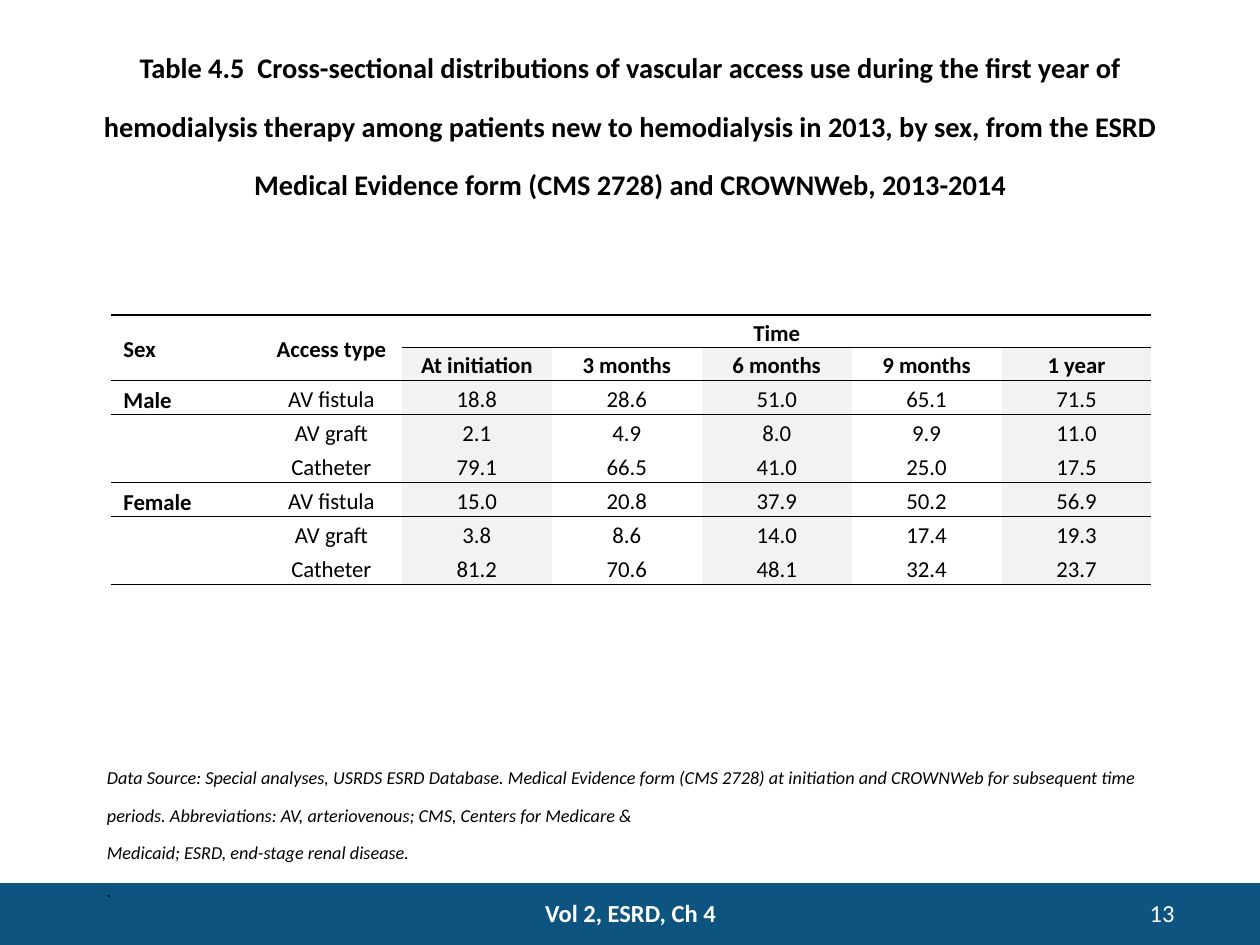
from lxml import etree
from pptx import Presentation
from pptx import util as u
from pptx.dml.color import RGBColor
from pptx.enum import shapes, text
from pptx.oxml import ns

LEFT, CENTER, RIGHT = text.PP_ALIGN.LEFT, text.PP_ALIGN.CENTER, text.PP_ALIGN.RIGHT


def style(p, size, color="000000", align=LEFT, bold=False, italic=False, raised=False):
    p.alignment = align
    for r in p.runs:
        f = r.font
        f.name, f.size, f.bold, f.italic = "Calibri", u.Pt(size), bold, italic
        f.color.rgb = RGBColor.from_string(color)
        if raised:
            f._element.set("baseline", "30000")


def rule(cell, side, width):
    ln = etree.SubElement(cell._tc.get_or_add_tcPr(), ns.qn(f"a:{side}"), w=str(u.Pt(width)))
    fill = etree.SubElement(ln, ns.qn("a:solidFill"))
    etree.SubElement(fill, ns.qn("a:srgbClr"), val="000000")


prs = Presentation()
prs.slide_width, prs.slide_height = u.Inches(10), u.Inches(7.5)
s = prs.slides.add_slide(prs.slide_layouts[6])

# Footer band
sp = s.shapes.add_shape(shapes.MSO_SHAPE.RECTANGLE, 0, u.Inches(7.01), prs.slide_width, u.Inches(0.5))
sp.shadow.inherit = False
sp.fill.solid()
sp.fill.fore_color.rgb = RGBColor.from_string("0E5480")
sp.line.fill.background()

# Sex by access type table
rows = [
    ["Sex", "Access type", "Time", "", "", "", ""],
    ["", "", "At initiation", "3 months", "6 months", "9 months", "1 year"],
    ["Male", "AV fistula", "18.8", "28.6", "51.0", "65.1", "71.5"],
    ["", "AV graft", "2.1", "4.9", "8.0", "9.9", "11.0"],
    ["", "Catheter", "79.1", "66.5", "41.0", "25.0", "17.5"],
    ["Female", "AV fistula", "15.0", "20.8", "37.9", "50.2", "56.9"],
    ["", "AV graft", "3.8", "8.6", "14.0", "17.4", "19.3"],
    ["", "Catheter", "81.2", "70.6", "48.1", "32.4", "23.7"],
]
HEADER_ROWS, FIRST_TIME_COL = 2, 2
rules = {0: 1, 1: 0.5, 2: 1, 5: 1, 8: 1}  # row boundary: line width
table = s.shapes.add_table(len(rows), len(rows[0]), u.Inches(0.88), u.Inches(2.5),
                           u.Inches(8.24), u.Inches(2.17)).table
table._tbl.tblPr[0].text = "{2D5ABB26-0587-4C30-8999-92F81FD0307C}"  # no style, no grid
table.first_row = table.horz_banding = False
for j, col in enumerate(table.columns):
    col.width = u.Inches(1.12 if j == 1 else 1.19)
for i, row in enumerate(table.rows):
    row.height = u.Inches(0.26 if i < HEADER_ROWS else 0.27)

for i, values in enumerate(rows):
    for j, value in enumerate(values):
        cell = table.cell(i, j)
        cell.margin_top = cell.margin_bottom = 0
        at_bottom = value in ("Time", "Male", "Female")
        cell.vertical_anchor = text.MSO_ANCHOR.BOTTOM if at_bottom else text.MSO_ANCHOR.MIDDLE
        p = cell.text_frame.paragraphs[0]
        p.line_spacing, p.space_after = 1.15, u.Pt(10)
        if value:
            p.text = value
            style(p, 13, align=CENTER if j else LEFT, bold=i < HEADER_ROWS or j == 0)
        else:
            p._p.get_or_add_endParaRPr().set("sz", "1300")
        for side, edge in (("lnT", i), ("lnB", i + 1)):
            if edge in rules and (edge != 1 or j >= FIRST_TIME_COL):
                rule(cell, side, rules[edge])
        shaded = i > 0 and j >= FIRST_TIME_COL and j % 2 == 0
        if shaded or i >= HEADER_ROWS:
            cell.fill.solid()
            cell.fill.fore_color.rgb = RGBColor.from_string("F2F2F2" if shaded else "FFFFFF")
        else:
            cell.fill.background()

table.cell(0, 0).merge(table.cell(1, 0))
table.cell(0, 1).merge(table.cell(1, 1))
table.cell(0, 2).merge(table.cell(0, 6))

# Title, source note and footer texts: box in inches, paragraphs, style
boxes = [
    ((0.5, 0.3, 9, 1.04),
     ["Table 4.5  Cross-sectional distributions of vascular access use during the first year of "
      "hemodialysis therapy among patients new to hemodialysis in 2013, by sex, from the ESRD "
      "Medical Evidence form (CMS 2728) and CROWNWeb, 2013-2014"],
     dict(size=28, align=CENTER, bold=True, raised=True)),
    ((0.75, 6, 8.42, 0.91),
     ["Data Source: Special analyses, USRDS ESRD Database. Medical Evidence form (CMS 2728) at "
      "initiation and CROWNWeb for subsequent time periods. Abbreviations: AV, arteriovenous; "
      "CMS, Centers for Medicare &",
      "Medicaid; ESRD, end-stage renal disease.",
      "."],
     dict(size=18, italic=True, raised=True)),
    ((3.92, 7.08, 2.17, 0.33), ["Vol 2, ESRD, Ch 4"],
     dict(size=14, color="FFFFFF", align=CENTER, bold=True)),
    ((8.42, 7.08, 1, 0.3), ["13"], dict(size=14, color="FFFFFF", align=RIGHT)),
]
for box, lines, look in boxes:
    tf = s.shapes.add_textbox(*map(u.Inches, box)).text_frame
    tf.word_wrap = True
    tf.text = "\n".join(lines)
    for p in tf.paragraphs:
        style(p, **look)

prs.save("out.pptx")
